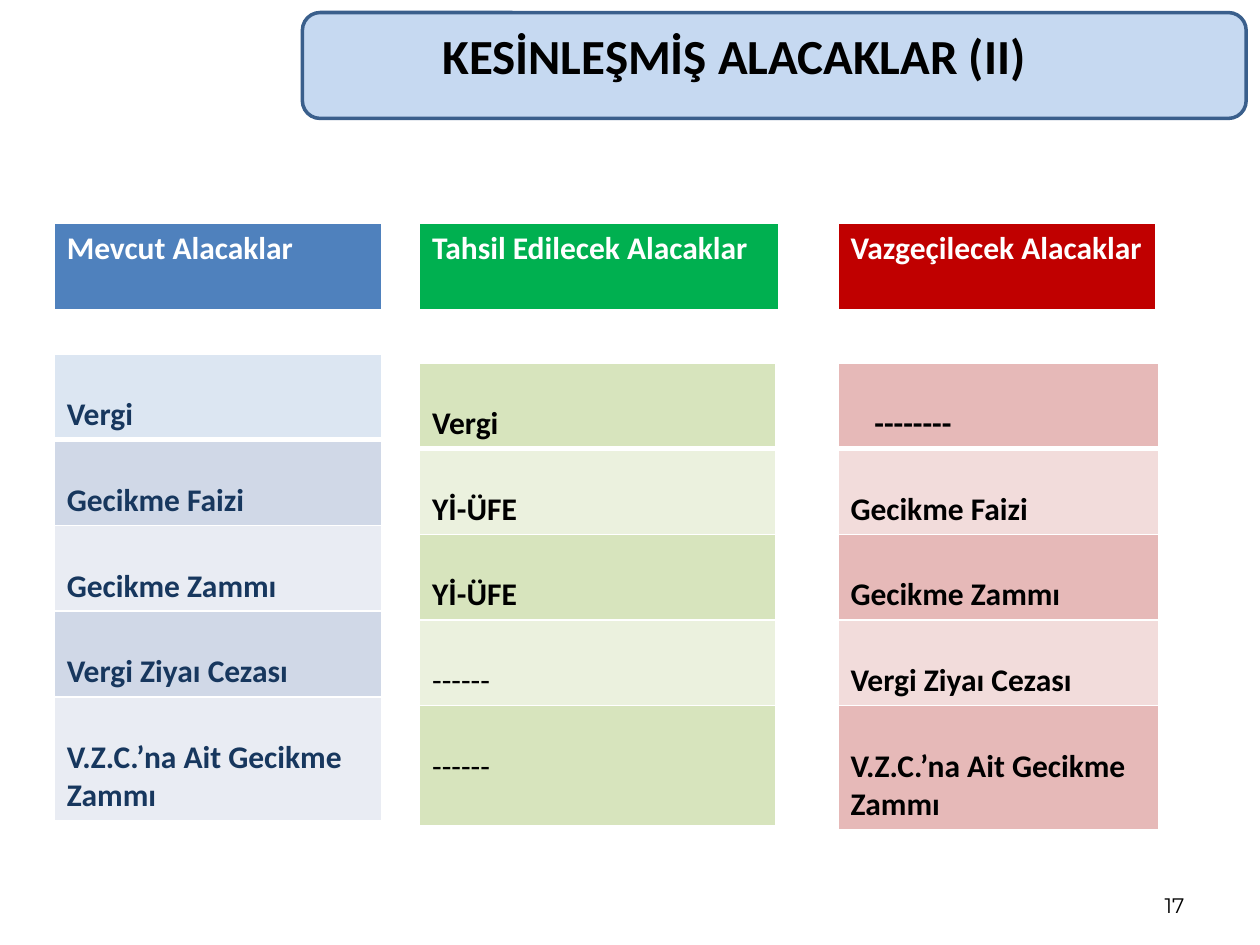
from lxml.etree import SubElement
from pptx import Presentation
from pptx.dml.color import RGBColor
from pptx.enum.shapes import MSO_SHAPE
from pptx.enum.text import MSO_ANCHOR, PP_ALIGN
from pptx.oxml.ns import qn
from pptx.util import Inches, Pt


def color(value):
    return RGBColor.from_string(value)


class SlideBuilder:
    font = "Calibri"
    size = 18
    border = "FFFFFF"
    thin = 0.96
    thick = 3

    def __init__(self, slide):
        self.slide = slide

    def run(self, paragraph, text, ink, size=None, font=None, bold=True):
        run = paragraph.add_run()
        run.text = text
        run.font.name = font or self.font
        run.font.size = Pt(size or self.size)
        run.font.bold = bold
        run.font.color.rgb = color(ink)

    def panel(self, box, fill, outline):
        panel = self.slide.shapes.add_shape(MSO_SHAPE.ROUNDED_RECTANGLE, *map(Inches, box))
        panel.shadow.inherit = False
        panel.fill.solid()
        panel.fill.fore_color.rgb = color(fill)
        panel.line.color.rgb = color(outline)
        panel.line.width = Pt(2)

    def text(self, box, text, align, anchor, wrap=True, **style):
        frame = self.slide.shapes.add_textbox(*map(Inches, box)).text_frame
        frame.word_wrap = wrap
        frame.vertical_anchor = anchor
        frame.paragraphs[0].alignment = align
        self.run(frame.paragraphs[0], text, "000000", **style)

    def borders(self, cell, top, bottom):
        properties = cell._tc.get_or_add_tcPr()
        widths = {"a:lnL": self.thin, "a:lnR": self.thin, "a:lnT": top, "a:lnB": bottom}
        for tag, width in widths.items():
            line = SubElement(properties, qn(tag), w=str(Pt(width)))
            SubElement(SubElement(line, qn("a:solidFill")), qn("a:srgbClr"), val=self.border)

    def table(self, left, top, width, heights, labels, fills, ink, inset=0.05):
        box = map(Inches, (left, top, width, sum(heights)))
        table = self.slide.shapes.add_table(len(labels), 1, *box).table
        for index, (height, label, fill) in enumerate(zip(heights, labels, fills)):
            table.rows[index].height = Inches(height)
            cell = table.cell(index, 0)
            self.borders(cell, self.thick if index == 1 else self.thin,
                         self.thick if index == 0 else self.thin)
            cell.fill.solid()
            cell.fill.fore_color.rgb = color(fill)
            cell.margin_top = Inches(inset)
            self.run(cell.text_frame.paragraphs[0], label, ink, bold=label != "------")
        return table


def main():
    presentation = Presentation()
    presentation.slide_width, presentation.slide_height = Inches(10), Inches(7.5)
    builder = SlideBuilder(presentation.slides.add_slide(presentation.slide_layouts[6]))

    builder.panel((2.4, 0.1, 7.49, 0.84), "C6D9F1", "3A5F8C")
    builder.text((7.17, 6.83, 2.33, 0.5), "17", PP_ALIGN.RIGHT, MSO_ANCHOR.BOTTOM,
                 size=12, font="Montserrat", bold=False)
    builder.text((3.41, 0.15, 4.83, 0.57), "KESİNLEŞMİŞ ALACAKLAR (II)",
                 PP_ALIGN.CENTER, MSO_ANCHOR.TOP, wrap=False, size=28)

    charges = ["Gecikme Faizi", "Gecikme Zammı", "Vergi Ziyaı Cezası",
               "V.Z.C.’na Ait Gecikme Zammı"]
    green, pale_green = "D7E4BD", "EBF1DE"
    red, pale_red = "E6B9B8", "F2DCDB"
    blue, pale_blue = "D0D8E7", "E9ECF3"
    columns = [
        ("Mevcut Alacaklar", "4F81BD", 0.43, 2.6, 2.81, 2.6, 0.98, "17375E",
         ["Vergi"] + charges, ["DCE6F2"] + [blue, pale_blue] * 2),
        ("Tahsil Edilecek Alacaklar", "00B050", 3.33, 2.85, 2.88, 2.83, 0.95, "000000",
         ["Vergi", "Yİ-ÜFE", "Yİ-ÜFE", "------", "------"],
         [green] + [pale_green, green] * 2),
        ("Vazgeçilecek Alacaklar", "C00000", 6.65, 2.52, 2.88, 2.55, 0.98, "000000",
         ["--------"] + charges, [red] + [pale_red, red] * 2),
    ]
    for (heading, accent, left, heading_width, top, width, last_height, ink,
         labels, fills) in columns:
        builder.table(left, 1.77, heading_width, [0.7], [heading], [accent], "FFFFFF")
        receivables = builder.table(left, top, width, [0.68] * 4 + [last_height],
                                    labels, fills, ink, inset=0.33)
    receivables.cell(0, 0).margin_left = Inches(0.29)

    presentation.save("out.pptx")


if __name__ == "__main__":
    main()
